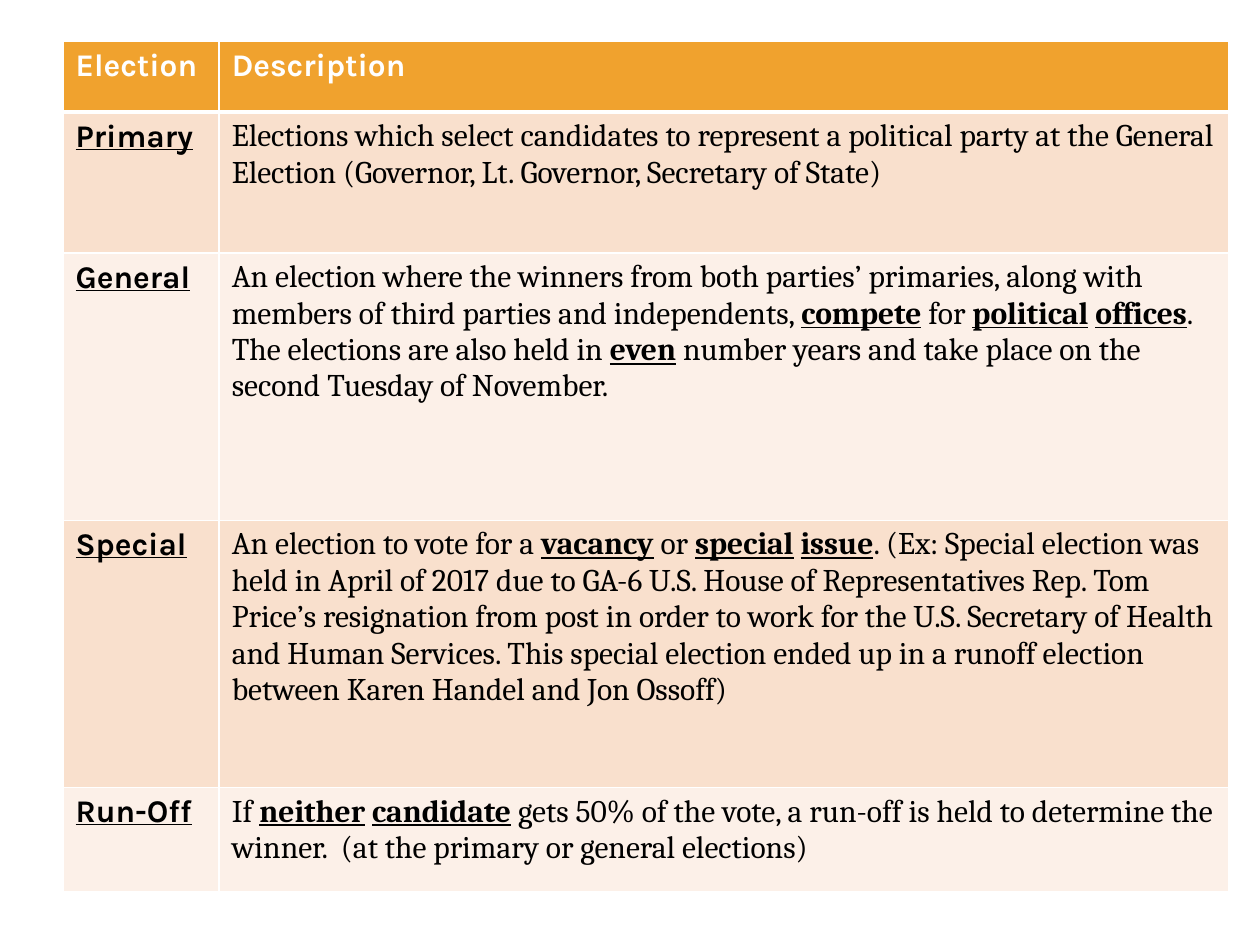
from lxml import etree
from pptx import Presentation
from pptx.dml.color import RGBColor
from pptx.oxml.ns import qn
from pptx.util import Inches, Pt

WHITE = RGBColor(0xFF, 0xFF, 0xFF)
BLACK = RGBColor(0, 0, 0)
GOLD = RGBColor(0xF0, 0xA2, 0x2E)
PEACH = RGBColor(0xF9, 0xE0, 0xCD)
CREAM = RGBColor(0xFC, 0xF0, 0xE8)

SIZE = 10, 7.5
BOX = 0.5, 0.33, 9.25, 6.75
COLS = 1.24, 8.01
ROWS = 0.56, 1.12, 2.12, 2.12, 0.83
FONTS = "Karla", "Cambria"
HEADS = "Election", "Description"
BODY = [
    ("*Primary* ",
     "Elections which select candidates to represent a political party at the "
     "General Election (Governor, Lt. Governor, Secretary of State)"),
    ("*General* ",
     "An election where the winners from both parties’ primaries, along with "
     "members of third parties and independents, *compete* for *political* *offices*.\n"
     "The elections are also held in *even* number years and take place on the "
     "second Tuesday of November."),
    ("*Special* ",
     "An election to vote for a *vacancy* or *special* *issue*. (Ex: Special election "
     "was held in April of 2017 due to GA-6 U.S. House of Representatives Rep. Tom "
     "Price’s resignation from post in order to work for the U.S. Secretary of Health "
     "and Human Services. This special election ended up in a runoff election between "
     "Karen Handel and Jon Ossoff)"),
    ("*Run-Off*",
     "If *neither* *candidate* gets 50% of the vote, a run-off is held to determine "
     "the winner.  (at the primary or general elections)"),
]


def add_run(para, text, color, form):
    run = para.add_run()
    run.text = text
    run.font.color.rgb = color
    for name, value in form.items():
        setattr(run.font, name, value)


def write(cell, text, color, form):
    frame = cell.text_frame
    for num, line in enumerate(text.split("\n")):
        para = frame.add_paragraph() if num else frame.paragraphs[0]
        for part, words in enumerate(line.split("*")):
            if words:
                mark = {"bold": True, "underline": True} if part % 2 else {}
                add_run(para, words, color, form | mark)


def edge(cell, base):
    props = cell._tc.get_or_add_tcPr()
    for side in "LRTB":
        width = base if side == "B" else 1
        line = etree.SubElement(props, qn(f"a:ln{side}"), w=str(Pt(width)))
        fill = etree.SubElement(line, qn("a:solidFill"))
        etree.SubElement(fill, qn("a:srgbClr"), val=str(WHITE))


def paint(cell, color, base=1):
    edge(cell, base)
    cell.fill.solid()
    cell.fill.fore_color.rgb = color


def add_grid(slide, box):
    left, top, width, height = map(Inches, box)
    table = slide.shapes.add_table(
        len(ROWS), len(COLS), left, top, width, height).table
    for col, share in zip(table.columns, COLS):
        col.width = int(width * share / sum(COLS))
    for row, share in zip(table.rows, ROWS):
        row.height = int(height * share / sum(ROWS))
    for col, head in enumerate(HEADS):
        cell = table.cell(0, col)
        paint(cell, GOLD, 3)
        write(cell, head, WHITE, {"name": FONTS[0], "size": Pt(18), "bold": True})
    for row, texts in enumerate(BODY, 1):
        for col, text in enumerate(texts):
            cell = table.cell(row, col)
            paint(cell, PEACH if row % 2 else CREAM)
            write(cell, text, BLACK, {
                "name": FONTS[col], "size": Pt(18), "bold": False})


def main():
    deck = Presentation()
    deck.slide_width, deck.slide_height = map(Inches, SIZE)
    slide = deck.slides.add_slide(deck.slide_layouts[6])
    add_grid(slide, BOX)
    deck.save("out.pptx")


if __name__ == "__main__":
    main()
